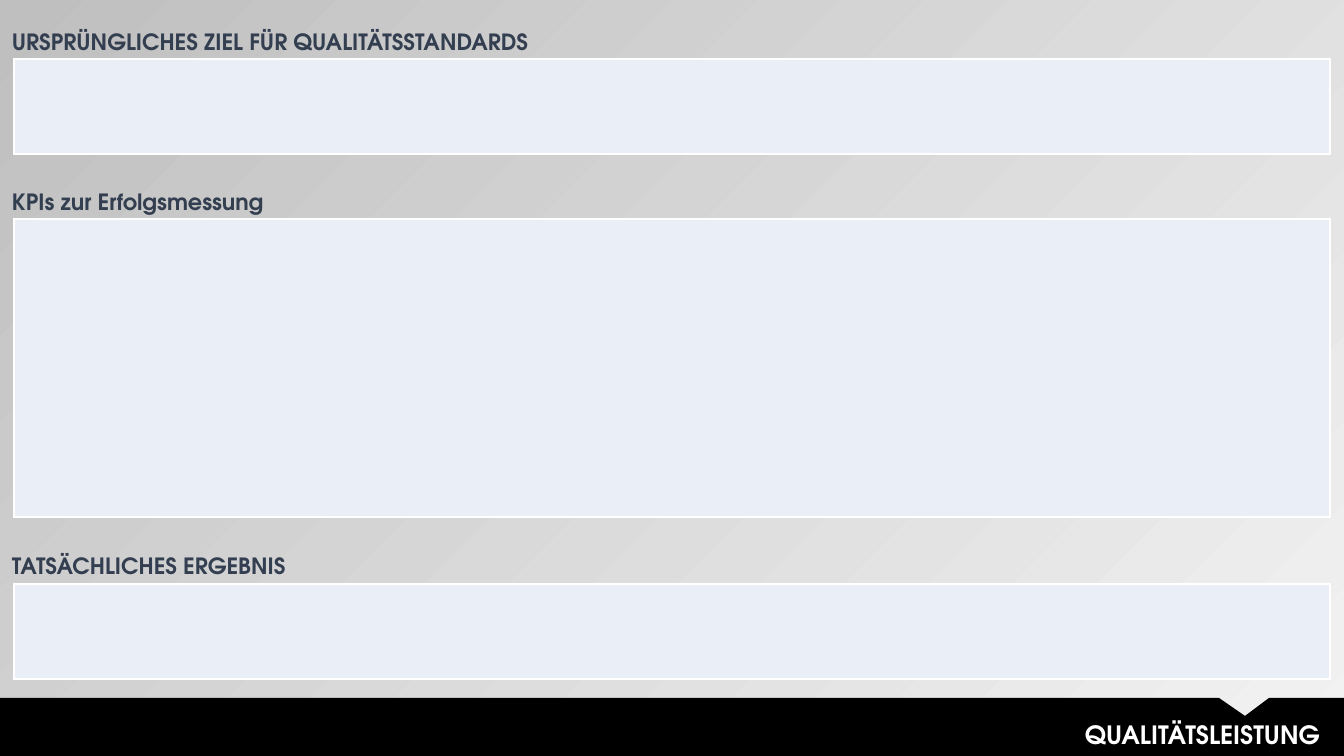
import pptx
import pptx.util
import pptx.dml.color
import pptx.enum.text
import pptx.oxml
import pptx.oxml.ns
import lxml.etree

PX = 12192000 / 1344
FONT = "TeX Gyre Adventor"
BLACK = pptx.dml.color.RGBColor(0x00, 0x00, 0x00)
WHITE = pptx.dml.color.RGBColor(0xFF, 0xFF, 0xFF)
NAVY = pptx.dml.color.RGBColor(0x33, 0x3F, 0x50)
PALE_BLUE = pptx.dml.color.RGBColor(0xEA, 0xEF, 0xF7)
LIGHT_GREY = pptx.dml.color.RGBColor(0xF2, 0xF2, 0xF2)
MID_GREY = pptx.dml.color.RGBColor(0xBF, 0xBF, 0xBF)


def px(*lengths):
    return [pptx.util.Emu(round(length * PX)) for length in lengths]


def write_text(box, text, size, color):
    frame = box.text_frame
    frame.text = text
    frame.word_wrap = True
    frame.auto_size = pptx.enum.text.MSO_AUTO_SIZE.SHAPE_TO_FIT_TEXT
    frame.vertical_anchor = pptx.enum.text.MSO_ANCHOR.TOP
    para = frame.paragraphs[0]
    font = para.runs[0].font
    font.name = FONT
    font.size = pptx.util.Pt(size)
    font.bold = True
    font.color.rgb = color
    return para


deck = pptx.Presentation()
deck.slide_width, deck.slide_height = px(1344, 756)
page = deck.slides.add_slide(deck.slide_layouts[5])

backdrop = page.background.fill
backdrop.gradient()
backdrop.gradient_angle = 135
for stop, color, position in zip(backdrop.gradient_stops, (LIGHT_GREY, MID_GREY), (0, 1)):
    stop.color.rgb = color
    stop.position = position
first_color = page.background._cSld.find(".//" + pptx.oxml.ns.qn("a:srgbClr"))
lxml.etree.SubElement(first_color, pptx.oxml.ns.qn("a:alpha"), val="40000")

title = page.shapes.title
title.left, title.top, title.width, title.height = px(417, 714, 913, 40)
para = write_text(title, "QUALITÄTSLEISTUNG", 18, WHITE)
para.alignment = pptx.enum.text.PP_ALIGN.RIGHT

outline = page.shapes.build_freeform(0, 698, scale=PX)
outline.add_line_segments(
    [(1219, 698), (1245, 716), (1269, 698), (1344, 698), (1344, 756), (0, 756)], close=True
)
footer = outline.convert_to_shape()
footer.shadow.inherit = False
footer.fill.solid()
footer.fill.fore_color.rgb = BLACK
footer.line.fill.background()
title.element.addprevious(footer.element)

sections = [
    ("URSPRÜNGLICHES ZIEL FÜR QUALITÄTSSTANDARDS", 19, 562, 59, 95),
    ("KPIs zur Erfolgsmessung", 179, 535, 219, 298),
    ("TATSÄCHLICHES ERGEBNIS", 543, 340, 584, 95),
]
for heading, heading_top, heading_width, table_top, table_height in sections:
    table = page.shapes.add_table(1, 1, *px(14, table_top, 1316, table_height)).table
    table.first_row = False
    table.horz_banding = False
    cell = table.cell(0, 0)
    cell.fill.solid()
    cell.fill.fore_color.rgb = PALE_BLUE
    for index, side in enumerate(("lnL", "lnR", "lnT", "lnB")):
        border = pptx.oxml.parse_xml(
            f'<a:{side} {pptx.oxml.ns.nsdecls("a")} w="12700"><a:solidFill>'
            f'<a:srgbClr val="{WHITE}"/></a:solidFill></a:{side}>'
        )
        cell._tc.get_or_add_tcPr().insert(index, border)

    label = page.shapes.add_textbox(*px(0, heading_top, heading_width, 40))
    para = write_text(label, heading, 16, NAVY)
    para.line_spacing = pptx.util.Pt(21.5)
    para.space_before = pptx.util.Pt(3)
    frame = label.text_frame
    frame.margin_left, frame.margin_top, frame.margin_right, frame.margin_bottom = px(12, 6, 12, 6)

deck.save("out.pptx")
